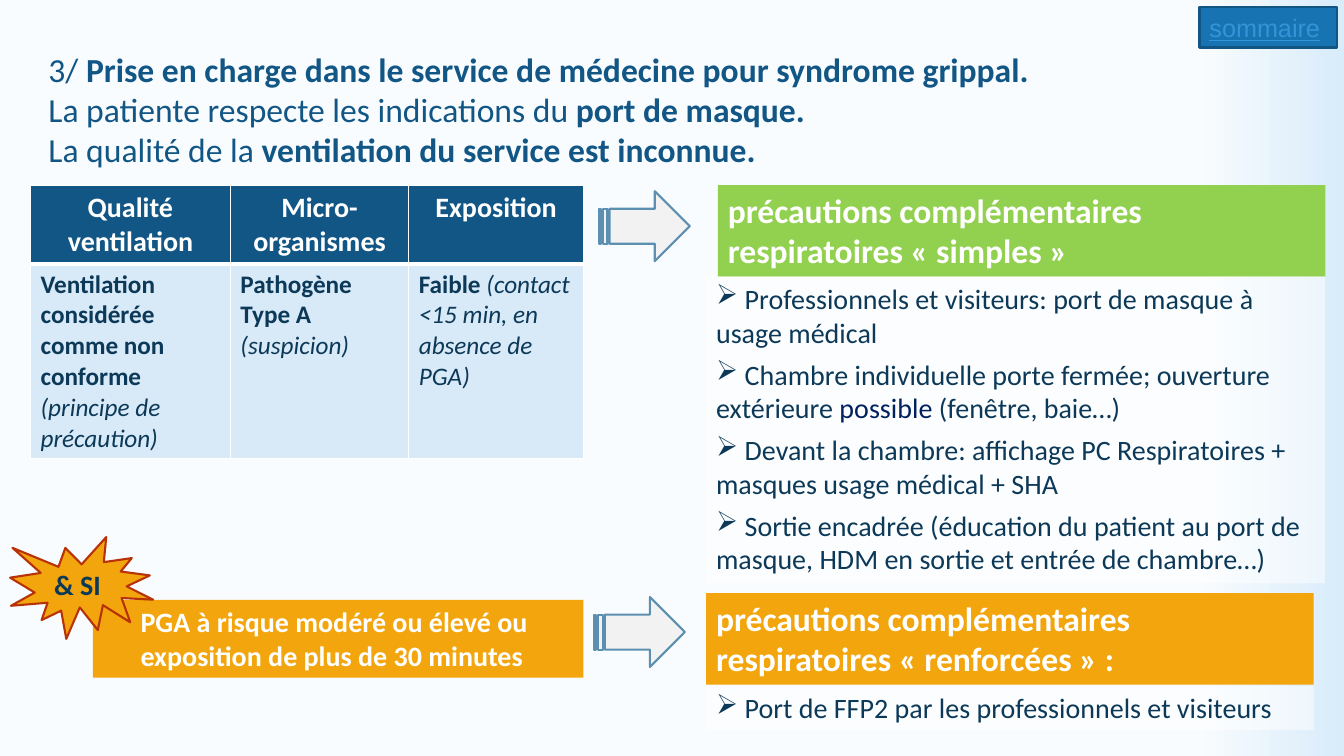
"""Build the slide on respiratory precautions for a flu-like syndrome."""
from dataclasses import dataclass

from lxml.etree import SubElement as Sub
from pptx import Presentation
from pptx.dml.color import RGBColor as RGB
from pptx.enum.shapes import MSO_SHAPE as Shape
from pptx.enum.text import MSO_ANCHOR as Anchor, MSO_AUTO_SIZE as Auto, PP_ALIGN as Align
from pptx.oxml.ns import qn
from pptx.util import Pt


@dataclass(frozen=True)
class Theme:
    font: str = "Calibri"
    link_font: str = "Arial"
    head: int = 24
    body: int = 20
    small: int = 18
    white: str = "FFFFFF"
    ink: str = "0C3958"
    navy: str = "002060"
    blue: str = "115685"
    pale: str = "D8E9F8"
    green: str = "92D050"
    gold: str = "F2A50C"
    rust: str = "B83208"
    grey: str = "F2F2F2"
    steel: str = "5D8FB0"
    button: str = "1773B1"
    edge: str = "115583"
    link: str = "3494D8"
    sky: tuple = (("F9FCFE", 0.89), ("D8ECFA", 1))


T = Theme()


def write(frame, paras, size, color, align=Align.LEFT, font=T.font, bullet=False, gap=0):
    """Fill a text frame; each paragraph is a list of (text, style) runs."""
    frame.word_wrap = True
    for n, runs in enumerate(paras):
        para = frame.paragraphs[0] if n == 0 else frame.add_paragraph()
        para.alignment = align
        para.space_before = Pt(gap)
        if bullet:
            Sub(para._p.get_or_add_pPr(), qn("a:buChar"), char="➢")
        para.font.name = font
        para.font.size = Pt(size)
        para.font.color.rgb = RGB.from_string(color)
        if len(runs) == 1:
            para.font.bold = runs[0][1] == "b"
            para.font.italic = runs[0][1] == "i"
        for text, style in runs:
            run = para.add_run()
            run.text = text
            if len(runs) > 1:
                run.font.bold = style == "b"
                run.font.italic = style == "i"
            if style == "navy":
                run.font.color.rgb = RGB.from_string(T.navy)


def draw(kind, area, fill, line=None, alpha=None):
    """Add a flat shape with an optional outline and opacity."""
    shape = slide.shapes.add_shape(kind, *map(Pt, area))
    shape.shadow.inherit = False
    shape.fill.solid()
    shape.fill.fore_color.rgb = RGB.from_string(fill)
    if alpha:
        tint = shape._element.spPr.find(qn("a:solidFill")).find(qn("a:srgbClr"))
        Sub(tint, qn("a:alpha"), val=str(alpha * 1000))
    if line:
        shape.line.color.rgb = RGB.from_string(line)
        shape.line.width = Pt(1.5)
    else:
        shape.line.fill.background()
    shape.text_frame.vertical_anchor = Anchor.TOP
    return shape


deck = Presentation()
deck.slide_width, deck.slide_height = Pt(960), Pt(540)
slide = deck.slides.add_slide(deck.slide_layouts[5])

back = slide.background.fill
back.gradient()
back.gradient_angle = 0
for stop, (color, place) in zip(back.gradient_stops, T.sky):
    stop.color.rgb = RGB.from_string(color)
    stop.position = place

title = slide.shapes.title
title.left, title.top, title.width, title.height = map(Pt, (27.4, 31, 799, 94.3))
title.text_frame.vertical_anchor = Anchor.TOP
title.text_frame.auto_size = Auto.NONE
write(title.text_frame, [
    [("3/ ", ""), ("Prise en charge dans le service de médecine pour syndrome grippal.", "b")],
    [("La patiente respecte les indications du ", ""), ("port de masque.", "b")],
    [("La qualité de la ", ""), ("ventilation du service est inconnue.", "b")],
], T.head, T.blue)

rows = [
    [[[("Qualité ventilation", "b")]], [[("Micro-organismes", "b")]], [[("Exposition", "b")]]],
    [
        [[("Ventilation considérée comme non conforme ", "b"), ("(principe de précaution)", "i")]],
        [[("Pathogène Type A", "b")], [("(suspicion)", "i")]],
        [[("Faible ", "b"), ("(contact <15 min, en absence de PGA)", "i")]],
    ],
]
looks = [(T.body, T.white, Align.CENTER, T.blue, 3), (T.small, T.ink, Align.LEFT, T.pale, 1)]
grid = slide.shapes.add_table(2, 3, Pt(21.8), Pt(132.5), Pt(395), Pt(195)).table
for col, width in zip(grid.columns, (142.8, 127.4, 124.8)):
    col.width = Pt(width)
for row, height in zip(grid.rows, (56, 139)):
    row.height = Pt(height)
for r, (size, color, align, fill, base) in enumerate(looks):
    for c, paras in enumerate(rows[r]):
        cell = grid.cell(r, c)
        write(cell.text_frame, paras, size, color, align)
        props = cell._tc.get_or_add_tcPr()
        for side, weight in (("L", 1), ("R", 1), ("T", 1 if r == 0 else 3), ("B", base)):
            edge = Sub(props, qn(f"a:ln{side}"), w=str(Pt(weight)))
            Sub(Sub(edge, qn("a:solidFill")), qn("a:srgbClr"), val=T.white)
        cell.fill.solid()
        cell.fill.fore_color.rgb = RGB.from_string(fill)

for left, top in ((427.7, 136.6), (424.2, 426.5)):
    draw(Shape.STRIPED_RIGHT_ARROW, (left, top, 65, 50), T.grey, T.steel)

banners = [
    ((512.8, 132.2, 434, 65.4), T.green, "précautions complémentaires respiratoires « simples »"),
    ((504.4, 423.6, 434, 65.4), T.gold, "précautions complémentaires respiratoires « renforcées » :"),
]
for area, fill, text in banners:
    banner = draw(Shape.RECTANGLE, area, fill)
    write(banner.text_frame, [[(text, "b")]], T.head, T.white)

lists = [
    ((504.4, 197.5, 442, 219.3), 6, [
        [(" Professionnels et visiteurs: port de masque à usage médical", "")],
        [(" Chambre individuelle porte fermée; ouverture extérieure", ""),
         (" possible ", "navy"), ("(fenêtre, baie…)", "")],
        [(" Devant la chambre: affichage PC Respiratoires + masques usage médical + SHA", "")],
        [(" Sortie encadrée (éducation du patient au port de masque, "
          "HDM en sortie et entrée de chambre…)", "")],
    ]),
    ((504.4, 490, 434, 31.5), 0, [[(" Port de FFP2 par les professionnels et visiteurs", "")]]),
]
for area, gap, paras in lists:
    panel = draw(Shape.RECTANGLE, area, T.white, alpha=50)
    write(panel.text_frame, paras, T.body, T.ink, bullet=True, gap=gap)

risk = draw(Shape.RECTANGLE, (66.3, 428.4, 350.5, 55.7), T.gold)
write(risk.text_frame, [[("PGA à risque modéré ou élevé ou exposition de plus de 30 minutes", "b")]],
      T.body, T.white)
risk.text_frame.paragraphs[0]._p.get_or_add_pPr().set("marL", str(Pt(27)))

burst = draw(Shape.EXPLOSION1, (7.2, 383.6, 102.2, 72.7), T.gold, T.rust)
burst.text_frame.vertical_anchor = Anchor.MIDDLE
write(burst.text_frame, [[("& SI ", "b")]], T.body, T.ink, Align.CENTER)

button = draw(Shape.RECTANGLE, (856.8, 5.2, 98, 28.8), T.button, T.edge)
button.text_frame.vertical_anchor = Anchor.MIDDLE
write(button.text_frame, [[("sommaire", "")]], T.small, T.link, font=T.link_font)
button.text_frame.paragraphs[0].font.underline = True

deck.save("out.pptx")
